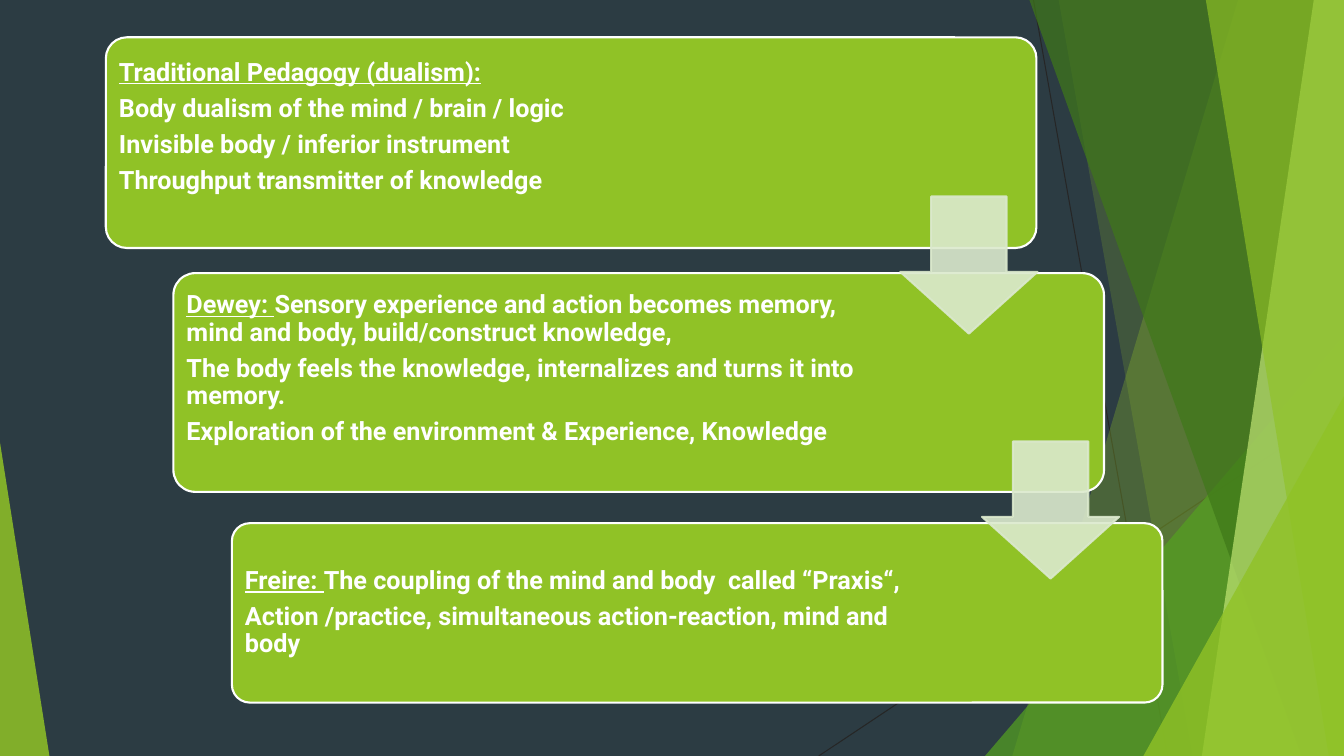
from lxml import etree
from pptx import Presentation
from pptx.dml.color import RGBColor
from pptx.enum.shapes import MSO_CONNECTOR, MSO_SHAPE
from pptx.enum.text import MSO_ANCHOR
from pptx.oxml.ns import qn
from pptx.util import Inches, Pt

STRAIGHT = MSO_CONNECTOR.STRAIGHT
TRIANGLE = MSO_SHAPE.ISOSCELES_TRIANGLE
ROUNDED = MSO_SHAPE.ROUNDED_RECTANGLE
DOWN_ARROW = MSO_SHAPE.DOWN_ARROW
MIDDLE = MSO_ANCHOR.MIDDLE
WIDTH, HEIGHT = 13.33, 7.5
GREEN, WHITE, PALE = "90C226", "FFFFFF", "DBE9CD"


def paint(shape, color, outline=None, opacity=100):
    shape.shadow.inherit = False
    shape.fill.solid()
    shape.fill.fore_color.rgb = RGBColor.from_string(color)
    if outline:
        shape.line.color.rgb = RGBColor.from_string(outline)
        shape.line.width = Pt(1.5)
    else:
        shape.line.fill.background()
    if opacity < 100:
        for tint in shape.element.iter(qn("a:srgbClr")):
            etree.SubElement(tint, qn("a:alpha"), val=str(opacity * 1000))


def add_text(paragraph, text, size=18, font="Roboto", color=WHITE, bold=True, underline=False):
    run = paragraph.add_run()
    run.text = text
    run.font.size = Pt(size)
    run.font.name = font
    run.font.bold = bold
    run.font.underline = underline
    run.font.color.rgb = RGBColor.from_string(color)


prs = Presentation()
prs.slide_width, prs.slide_height = Inches(WIDTH), Inches(HEIGHT)
slide = prs.slides.add_slide(prs.slide_layouts[6])
slide.background.fill.solid()
slide.background.fill.fore_color.rgb = RGBColor.from_string("2C3C43")
shapes = slide.shapes

for start_x, start_y, end_x in [(10.25, 0, 11.58), (WIDTH, 4.03, 8.12)]:
    ray = shapes.add_connector(
        STRAIGHT, Inches(start_x), Inches(start_y), Inches(end_x), Inches(HEIGHT))
    ray.line.color.rgb = RGBColor.from_string("262626")
    ray.line.width = Pt(0.75)
    etree.SubElement(ray.element.spPr, qn("a:effectLst"))

facets = [
    ("band", 12.28, 10.04, GREEN, 30),
    ("band", 10.5, 11.83, GREEN, 20),
    ("corner", 9.77, 3.33, 3.56, 1, "54A021", 72),
    ("band", 10.21, 12.91, "3F7819", 70),
    ("band", 13.03, 11.92, "C0E474", 70),
    ("band", 11.96, 13.18, GREEN, 65),
    ("corner", 11.34, 3.93, 1.99, 1, GREEN, 80),
    ("corner", 0, 4.39, 0.49, 0, GREEN, 85),
]
for kind, *geometry, color, opacity in facets:
    if kind == "band":
        top_x, bottom_x = geometry
        outline = shapes.build_freeform(Inches(top_x), 0)
        outline.add_line_segments(
            [(Inches(x), Inches(y))
             for x, y in [(WIDTH, 0), (WIDTH, HEIGHT), (bottom_x, HEIGHT)]], close=True)
        facet = outline.convert_to_shape()
    else:
        left, top, width, apex = geometry
        facet = shapes.add_shape(
            TRIANGLE, Inches(left), Inches(top), Inches(width), Inches(HEIGHT - top))
        facet.adjustments[0] = apex
    paint(facet, color, opacity=opacity)

stages = [
    (1.05, 0.37, 2.09, 6.98, 0.38, [
        ("Traditional Pedagogy (dualism):", ""),
        ("", "Body dualism of the mind / brain / logic"),
        ("", "Invisible body / inferior instrument"),
        ("", "Throughput transmitter of knowledge")]),
    (1.72, 2.71, 2.17, 6.94, 0.34, [
        ("Dewey: ", "Sensory experience and action becomes memory, "
                    "mind and body, build/construct knowledge,"),
        ("", "The body feels the knowledge, internalizes and turns it into memory."),
        ("", "Exploration of the environment & Experience, Knowledge")]),
    (2.3, 5.19, 1.78, 6.95, 0.07, [
        ("Freire: ", "The coupling of the mind and body  called “Praxis“,"),
        ("", "Action /practice, simultaneous action-reaction, mind and body")]),
]
for left, top, height, text_width, bottom_margin, ideas in stages:
    card = shapes.add_shape(ROUNDED, Inches(left), Inches(top), Inches(9.23), Inches(height))
    card.adjustments[0] = 0.1
    paint(card, GREEN, WHITE)

    frame = shapes.add_textbox(
        Inches(left + 0.06), Inches(top + 0.06),
        Inches(text_width), Inches(height - 0.12)).text_frame
    frame.word_wrap = True
    frame.vertical_anchor = MIDDLE
    frame.margin_left = frame.margin_right = frame.margin_top = Inches(0.07)
    frame.margin_bottom = Inches(bottom_margin)
    for index, (heading, body) in enumerate(ideas):
        paragraph = frame.add_paragraph() if index else frame.paragraphs[0]
        paragraph.line_spacing = 0.9
        paragraph.space_after = Pt(6.3)
        if heading:
            add_text(paragraph, heading, underline=True)
        if body:
            add_text(paragraph, body)

for left, top in [(8.93, 1.95), (9.74, 4.38)]:
    arrow = shapes.add_shape(DOWN_ARROW, Inches(left), Inches(top), Inches(1.36), Inches(1.36))
    arrow.adjustments[0] = 0.55
    arrow.adjustments[1] = 0.45
    paint(arrow, PALE, PALE, opacity=90)

prs.save("out.pptx")
